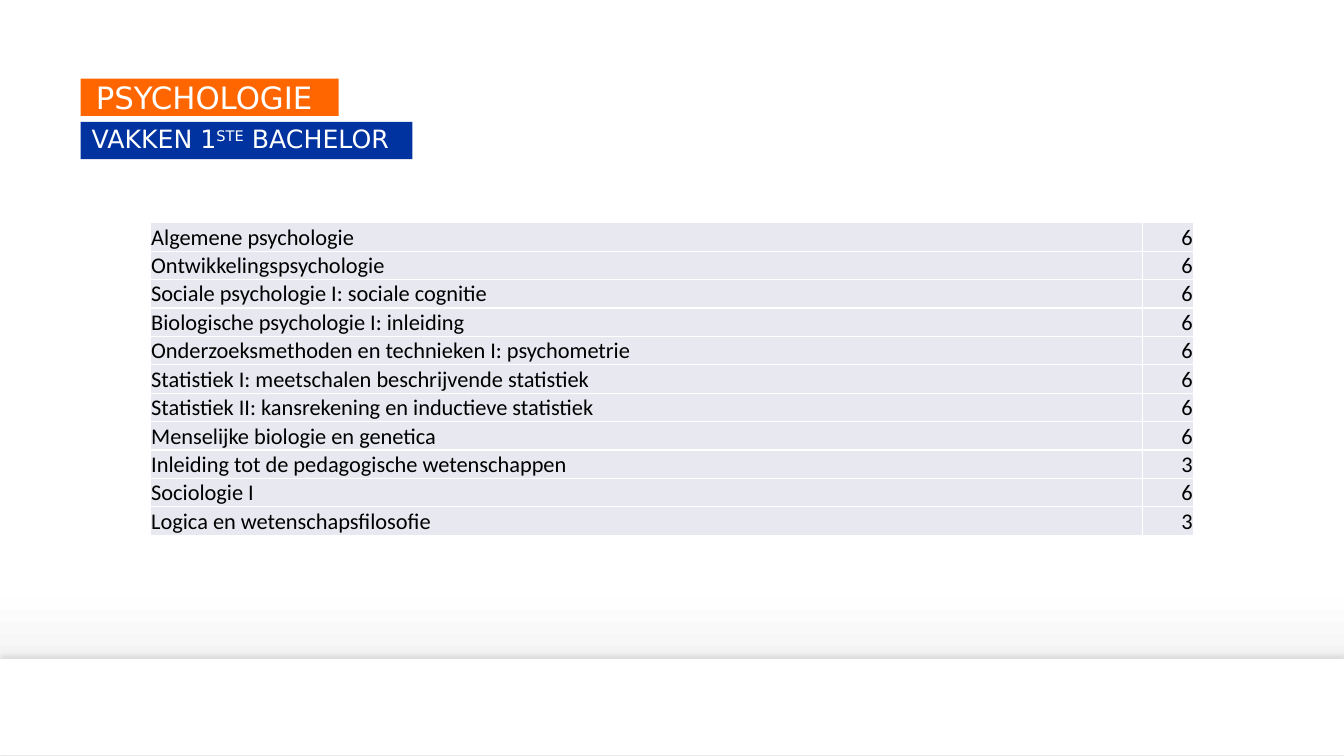
from dataclasses import dataclass

from lxml import etree
from pptx import Presentation
from pptx.dml.color import RGBColor as RGB
from pptx.enum.shapes import MSO_SHAPE as SHAPE
from pptx.enum.text import MSO_ANCHOR as ANCHOR, MSO_AUTO_SIZE as AUTO, PP_ALIGN as ALIGN
from pptx.oxml import parse_xml
from pptx.oxml.ns import nsdecls, qn
from pptx.util import Inches, Pt

TITLE = [("PSYCHOLOGIE", False)]
SUBTITLE = [("VAKKEN 1", False), ("STE", True), (" BACHELOR", False)]
COURSES = [
    ("Algemene psychologie", 6),
    ("Ontwikkelingspsychologie", 6),
    ("Sociale psychologie I: sociale cognitie", 6),
    ("Biologische psychologie I: inleiding", 6),
    ("Onderzoeksmethoden en technieken I: psychometrie", 6),
    ("Statistiek I: meetschalen beschrijvende statistiek", 6),
    ("Statistiek II: kansrekening en inductieve statistiek", 6),
    ("Menselijke biologie en genetica", 6),
    ("Inleiding tot de pedagogische wetenschappen", 3),
    ("Sociologie I", 6),
    ("Logica en wetenschapsfilosofie", 3),
]
COLUMNS = [(9.84, ALIGN.LEFT), (0.51, ALIGN.RIGHT)]
ROW_HEIGHT = 0.28


@dataclass(frozen=True)
class Theme:
    orange: str = "FF6600"
    blue: str = "00339F"
    white: str = "FFFFFF"
    black: str = "000000"
    cell: str = "E7E8F0"
    backdrop: tuple = ((0, "FFFFFF"), (79, "FEFEFE"), (92, "EDEDED"))
    heading_font: str = "DejaVu Sans"
    body_font: str = "Calibri"
    title_size: int = 22
    subtitle_size: int = 18
    body_size: int = 16


T = Theme()


def paint(fill, color):
    fill.solid()
    fill.fore_color.rgb = RGB.from_string(color)


def add_run(p, text, font, size, color):
    r = p.add_run()
    r.text = text
    r.font.name = font
    r.font.size = Pt(size)
    r.font.color.rgb = RGB.from_string(color)
    return r


def set_backdrop(s):
    stops = "".join(
        f'<a:gs pos="{pos * 1000}"><a:srgbClr val="{color}"/></a:gs>' for pos, color in T.backdrop
    )
    s.background.fill.solid()
    bg = s.element.find(".//" + qn("p:bgPr"))
    grad = parse_xml(
        f'<a:gradFill {nsdecls("a")} rotWithShape="1"><a:gsLst>{stops}</a:gsLst>'
        '<a:lin ang="5400000" scaled="0"/></a:gradFill>'
    )
    bg.replace(bg.find(qn("a:solidFill")), grad)


def add_band(s):
    sp = s.shapes.add_shape(SHAPE.RECTANGLE, 0, Inches(6.54), Inches(13.33), Inches(0.95))
    paint(sp.fill, T.white)
    sp.line.fill.background()
    sp.shadow.inherit = False
    effects = sp.element.spPr.find(qn("a:effectLst"))
    shadow = etree.SubElement(
        effects, qn("a:outerShdw"), blurRad=str(Pt(4)), dist=str(Pt(3)), dir="16200000", rotWithShape="0"
    )
    color = etree.SubElement(shadow, qn("a:srgbClr"), val=T.black)
    etree.SubElement(color, qn("a:alpha"), val="10000")


def format_label(sp, runs, top, width, color, size, indent, bottom, anchor, spacing):
    sp.left, sp.top, sp.width, sp.height = map(Inches, (0.8, top, width, 0.37))
    paint(sp.fill, color)
    tf = sp.text_frame
    tf.word_wrap = True
    tf.auto_size = AUTO.NONE
    tf.vertical_anchor = anchor
    tf.margin_left, tf.margin_top = Inches(indent), Inches(0.04)
    tf.margin_right, tf.margin_bottom = Inches(0.1), Inches(bottom)
    p = tf.paragraphs[0]
    p.alignment = ALIGN.LEFT
    p.line_spacing = spacing
    for text, raised in runs:
        r = add_run(p, text, T.heading_font, size, T.white)
        if raised:
            r.font._element.set("baseline", "30000")


def add_borders(cell):
    tc_pr = cell._tc.get_or_add_tcPr()
    for i, side in enumerate(("lnL", "lnR", "lnT", "lnB")):
        tc_pr.insert(i, parse_xml(
            f'<a:{side} {nsdecls("a")} w="{Pt(1)}"><a:solidFill>'
            f'<a:srgbClr val="{T.white}"/></a:solidFill></a:{side}>'
        ))


def add_courses(s):
    width = sum(w for w, _ in COLUMNS)
    frame = s.shapes.add_table(
        len(COURSES), len(COLUMNS), Inches(1.49), Inches(2.21),
        Inches(width), Inches(ROW_HEIGHT * len(COURSES)),
    )
    table = frame.table
    table.first_row = table.horz_banding = False
    for column, (w, _) in zip(table.columns, COLUMNS):
        column.width = Inches(w)
    for row, course in zip(table.rows, COURSES):
        row.height = Inches(ROW_HEIGHT)
        for cell, value, (_, align) in zip(row.cells, course, COLUMNS):
            paint(cell.fill, T.cell)
            cell.margin_left = cell.margin_right = cell.margin_top = Inches(0.01)
            cell.margin_bottom = 0
            cell.vertical_anchor = ANCHOR.BOTTOM
            p = cell.text_frame.paragraphs[0]
            p.alignment = align
            add_run(p, str(value), T.body_font, T.body_size, T.black)
            add_borders(cell)


def main():
    prs = Presentation()
    prs.slide_width, prs.slide_height = Inches(13.33), Inches(7.5)
    s = prs.slides.add_slide(prs.slide_layouts[5])
    set_backdrop(s)
    add_band(s)
    format_label(s.shapes.title, TITLE, 0.78, 2.56, T.orange, T.title_size, 0.15, 0, ANCHOR.BOTTOM, 0.9)
    subtitle = s.shapes.add_textbox(0, 0, 0, 0)
    format_label(subtitle, SUBTITLE, 1.21, 3.29, T.blue, T.subtitle_size, 0.11, 0.04, ANCHOR.TOP, 0.95)
    add_courses(s)
    prs.save("out.pptx")


if __name__ == "__main__":
    main()
